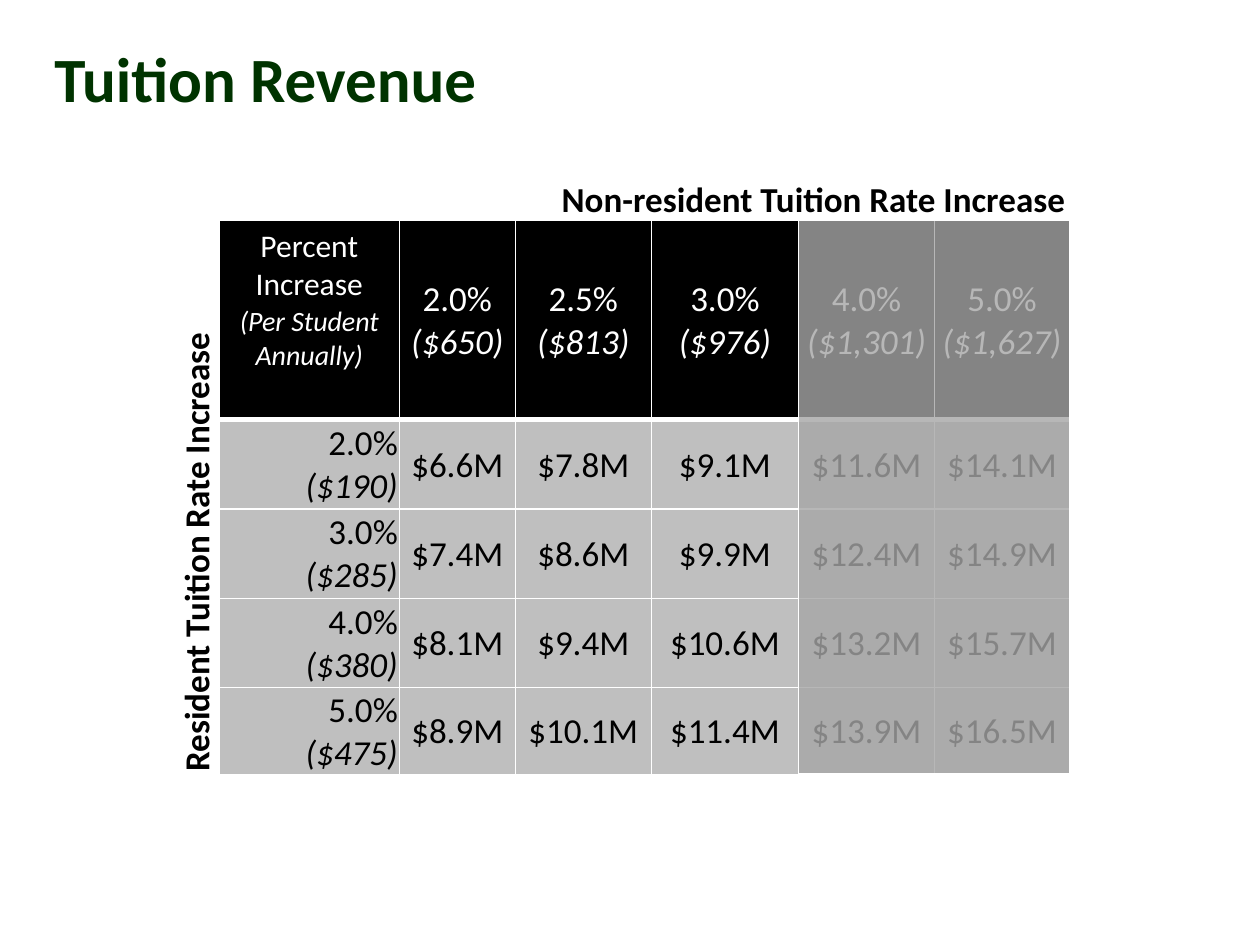
from lxml import etree
from pptx import Presentation
from pptx.dml.color import RGBColor
from pptx.enum.shapes import MSO_SHAPE
from pptx.enum.text import MSO_ANCHOR, PP_ALIGN
from pptx.oxml.ns import qn
from pptx.util import Cm, Pt

LEFT, MID, RIGHT = PP_ALIGN.LEFT, PP_ALIGN.CENTER, PP_ALIGN.RIGHT
MIDDLE = MSO_ANCHOR.MIDDLE
RECT = MSO_SHAPE.RECTANGLE

# Content
TITLE = "Tuition Revenue"
AXES = [  # text, left, top, turn
    ("Non-resident Tuition Rate Increase", 9.73, 3.45, 0),
    ("Resident Tuition Rate Increase", -2.72, 10.57, 270),
]
CORNER = ("Percent Increase", "(Per Student Annually)")
HEADS = [("2.0%", "($650)"), ("2.5%", "($813)"), ("3.0%", "($976)"),
         ("4.0%", "($1,301)"), ("5.0%", "($1,627)")]
ROWS = [
    (("2.0%", "($190)"), [6.6, 7.8, 9.1, 11.6, 14.1]),
    (("3.0%", "($285)"), [7.4, 8.6, 9.9, 12.4, 14.9]),
    (("4.0%", "($380)"), [8.1, 9.4, 10.6, 13.2, 15.7]),
    (("5.0%", "($475)"), [8.9, 10.1, 11.4, 13.9, 16.5]),
]

# Layout in cm
GRID_X, GRID_Y = 4.42, 4.45
WIDTHS = [3.63, 2.34, 2.74, 2.97, 2.74, 2.72]
HEIGHTS = [4.01, 1.8, 1.8, 1.8, 1.73]
FADED = 4  # first column under the veil
FONT = "Calibri"
COLORS = {"title": "003300", "head": "000000", "body": "BFBFBF",
          "ink": "000000", "white": "FFFFFF", "veil": "A6A6A6"}


def color(name):
    return RGBColor.from_string(COLORS[name])


def style(para, size, ink, align, bold=False, italic=False):
    para.alignment = align
    for run in para.runs:
        font = run.font
        font.name, font.size = FONT, Pt(size)
        font.bold, font.italic = bold, italic
        font.color.rgb = color(ink)


def border(cell, bottom):
    props = cell._tc.get_or_add_tcPr()
    for side, width in (("L", 1), ("R", 1), ("T", 1), ("B", bottom)):
        line = etree.SubElement(props, qn(f"a:ln{side}"), w=str(Pt(width)))
        fill = etree.SubElement(line, qn("a:solidFill"))
        etree.SubElement(fill, qn("a:srgbClr"), val=COLORS["white"])


def fill_cell(cell, lines, head, align, sizes=(20, 20)):
    border(cell, 3 if head else 1)
    cell.fill.solid()
    cell.fill.fore_color.rgb = color("head" if head else "body")
    cell.vertical_anchor = MIDDLE
    cell.margin_left = cell.margin_right = cell.margin_top = Cm(0.03)
    cell.margin_bottom = 0
    cell.text_frame.text = "\n".join(lines)
    ink = "white" if head else "ink"
    for i, para in enumerate(cell.text_frame.paragraphs):
        style(para, sizes[i], ink, align, italic=i > 0)


def add_grid(slide):
    table = slide.shapes.add_table(
        len(HEIGHTS), len(WIDTHS), Cm(GRID_X), Cm(GRID_Y),
        Cm(sum(WIDTHS)), Cm(sum(HEIGHTS))).table
    table.horz_banding = False
    for col, width in zip(table.columns, WIDTHS):
        col.width = Cm(width)
    for row, height in zip(table.rows, HEIGHTS):
        row.height = Cm(height)

    # Header row
    corner = table.cell(0, 0)
    fill_cell(corner, CORNER, True, MID, (18, 16))
    corner.margin_left = corner.margin_right = Cm(0.25)
    corner.margin_top, corner.margin_bottom = Cm(0.13), Cm(0.94)
    for c, lines in enumerate(HEADS, 1):
        fill_cell(table.cell(0, c), lines, True, MID)

    # Body rows
    for r, (lines, sums) in enumerate(ROWS, 1):
        fill_cell(table.cell(r, 0), lines, False, RIGHT)
        for c, value in enumerate(sums, 1):
            fill_cell(table.cell(r, c), [f"${value}M"], False, MID)


def add_axis(slide, text, left, top, turn):
    box = slide.shapes.add_textbox(Cm(left), Cm(top), Cm(13.34), Cm(1.12))
    box.rotation = turn
    box.text_frame.word_wrap = True
    box.text_frame.text = text
    style(box.text_frame.paragraphs[0], 20, "ink", MID, bold=True)


def add_veil(slide):
    veil = slide.shapes.add_shape(
        RECT, Cm(GRID_X + sum(WIDTHS[:FADED])), Cm(GRID_Y),
        Cm(sum(WIDTHS[FADED:])), Cm(sum(HEIGHTS)))
    veil.shadow.inherit = False
    veil.fill.solid()
    veil.fill.fore_color.rgb = color("veil")
    tint = veil.fill._xPr.find(qn("a:solidFill"))[0]
    etree.SubElement(tint, qn("a:alpha"), val="80000")
    veil.line.color.rgb = color("white")
    veil.line.width = Pt(0.75)


def main():
    deck = Presentation()
    deck.slide_width, deck.slide_height = Cm(25.4), Cm(19.05)
    slide = deck.slides.add_slide(deck.slide_layouts[5])

    # Title
    title = slide.shapes.title
    title.left, title.top = Cm(0.84), Cm(0)
    title.width, title.height = Cm(23.93), Cm(3.1)
    title.text_frame.text = TITLE
    title.text_frame.vertical_anchor = MIDDLE
    style(title.text_frame.paragraphs[0], 36, "title", LEFT, bold=True)

    # Table, axis labels and veil over the last columns
    add_grid(slide)
    for axis in AXES:
        add_axis(slide, *axis)
    add_veil(slide)
    deck.save("out.pptx")


if __name__ == "__main__":
    main()
